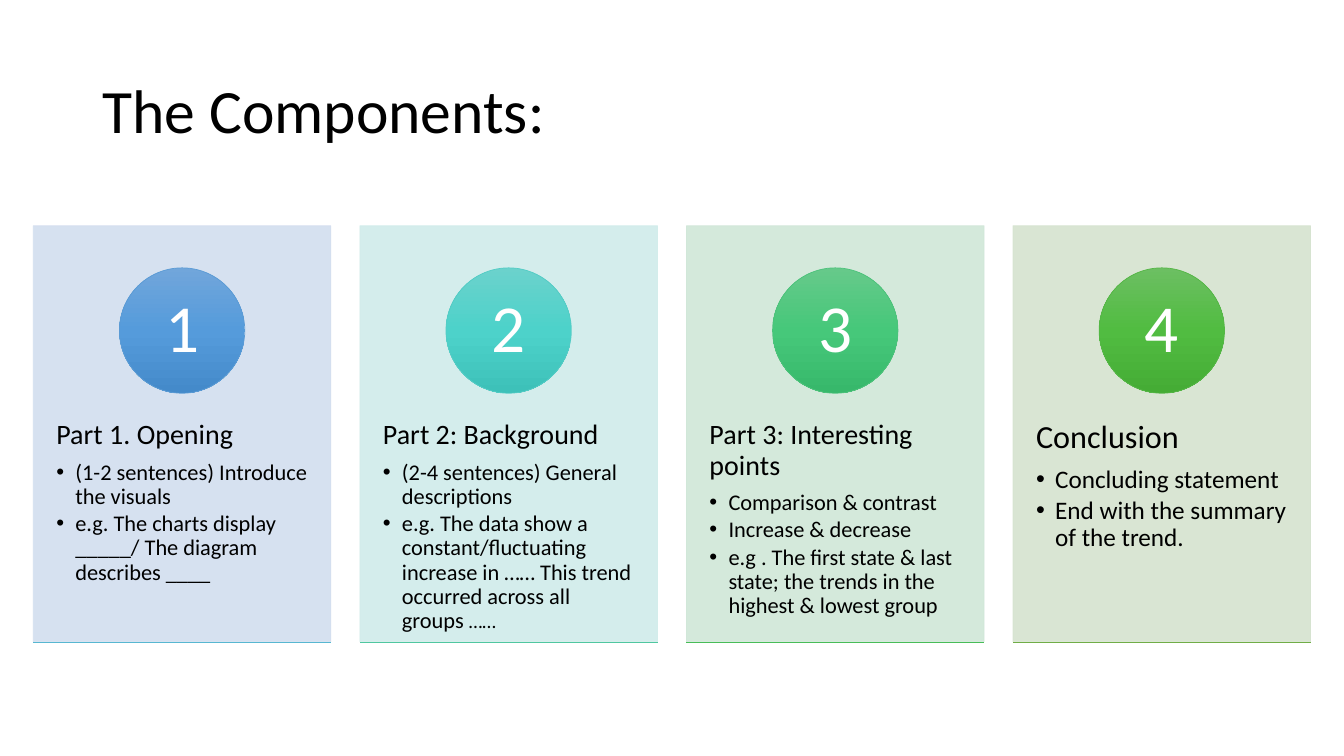
from copy import deepcopy
from dataclasses import dataclass

from lxml.etree import SubElement
from pptx import Presentation
from pptx.dml.color import RGBColor
from pptx.enum.shapes import MSO_CONNECTOR, MSO_SHAPE
from pptx.enum.text import MSO_ANCHOR, MSO_AUTO_SIZE, PP_ALIGN
from pptx.oxml.ns import qn
from pptx.shapes.autoshape import Shape
from pptx.slide import Slide
from pptx.text.text import Font, TextFrame, _Paragraph
from pptx.util import Cm, Length, Pt

BLACK = RGBColor(0x00, 0x00, 0x00)
WHITE = RGBColor(0xFF, 0xFF, 0xFF)
PALE_BLUE = RGBColor(0xD2, 0xDE, 0xEF)
PALE_TEAL = RGBColor(0xD0, 0xEC, 0xEA)
PALE_MINT = RGBColor(0xD0, 0xE7, 0xD8)
PALE_OLIVE = RGBColor(0xD5, 0xE3, 0xCF)
BLUE = RGBColor(0x5B, 0x9B, 0xD5)
TEAL = RGBColor(0x53, 0xCC, 0xC5)
MINT = RGBColor(0x4C, 0xC2, 0x7B)
GREEN = RGBColor(0x55, 0xB6, 0x46)
BLUE_BLEND = (RGBColor(0x71, 0xA6, 0xDB), RGBColor(0x55, 0x9B, 0xDB), RGBColor(0x44, 0x8A, 0xCA))
TEAL_BLEND = (RGBColor(0x6B, 0xD2, 0xCC), RGBColor(0x4D, 0xD2, 0xCA), RGBColor(0x3D, 0xC1, 0xB9))
MINT_BLEND = (RGBColor(0x66, 0xC9, 0x8A), RGBColor(0x46, 0xC8, 0x7A), RGBColor(0x37, 0xB8, 0x6B))
GREEN_BLEND = (RGBColor(0x6C, 0xBF, 0x62), RGBColor(0x51, 0xBC, 0x41), RGBColor(0x45, 0xAC, 0x35))
BASE_SKY = RGBColor(0x57, 0xB7, 0xD1)
BASE_AQUA = RGBColor(0x4F, 0xC7, 0xA0)
BASE_GREEN = RGBColor(0x48, 0xBD, 0x58)
BASE_OLIVE = RGBColor(0x70, 0xAD, 0x47)

FONT = "Calibri"
COMPARISON_LAYOUT = 4
CARD_LEFT, CARD_TOP = Cm(0.84), Cm(5.69)
CARD_WIDTH, CARD_HEIGHT = Cm(7.5), Cm(10.48)
CARD_PITCH = Cm(8.23)
BASE_TOP = Cm(16.18)
BODY_TOP, BODY_HEIGHT = Cm(9.68), Cm(6.27)
BADGE_TOP, BADGE_SIZE = Cm(6.75), Cm(3.16)
BULLET_INDENT = Cm(0.48)
HAIRLINE = Pt(0.5)


@dataclass(frozen=True)
class Component:
    heading: str
    points: tuple[str, ...]
    panel: RGBColor
    blend: tuple[RGBColor, RGBColor, RGBColor]
    rim: RGBColor
    base: RGBColor
    heading_size: int = 20
    point_size: int = 16
    ending: str = ""


COMPONENTS = (
    Component(
        "Part 1. Opening",
        ("(1-2 sentences) Introduce the visuals",
         "e.g. The charts display _____/ The diagram describes ____"),
        PALE_BLUE, BLUE_BLEND, BLUE, BASE_SKY),
    Component(
        "Part 2: Background",
        ("(2-4 sentences) General descriptions",
         "e.g. The data show a constant/fluctuating increase in …… "
         "This trend occurred across all groups "),
        PALE_TEAL, TEAL_BLEND, TEAL, BASE_AQUA, ending="……"),
    Component(
        "Part 3: Interesting points",
        ("Comparison & contrast", "Increase & decrease",
         "e.g . The first state & last state; the trends in the highest & lowest group"),
        PALE_MINT, MINT_BLEND, MINT, BASE_GREEN),
    Component(
        "Conclusion",
        ("Concluding statement", "End with the summary of the trend."),
        PALE_OLIVE, GREEN_BLEND, GREEN, BASE_OLIVE,
        heading_size=23, point_size=18),
)


def format_font(font: Font, size: float, color: RGBColor) -> None:
    font.name = FONT
    font.size = Pt(size)
    font.bold = False
    font.color.rgb = color


def format_paragraph(paragraph: _Paragraph, size: float, color: RGBColor, after: float) -> None:
    paragraph.line_spacing = 0.9
    paragraph.space_before = Pt(0)
    paragraph.space_after = Pt(size * after)
    for run in paragraph.runs:
        format_font(run.font, size, color)


def set_insets(frame: TextFrame, across: Length, down: Length) -> None:
    frame.margin_left = frame.margin_right = across
    frame.margin_top = frame.margin_bottom = down
    frame.word_wrap = True
    frame.auto_size = MSO_AUTO_SIZE.NONE


def set_bullet(paragraph: _Paragraph, shown: bool) -> None:
    properties = paragraph._p.get_or_add_pPr()
    properties.set("marL", str(BULLET_INDENT if shown else 0))
    properties.set("indent", str(-BULLET_INDENT if shown else 0))
    if shown:
        SubElement(properties, qn("a:buFont"), typeface="Arial")
        SubElement(properties, qn("a:buChar"), char="•")
    else:
        SubElement(properties, qn("a:buNone"))


def add_title(slide: Slide) -> None:
    title = slide.shapes.title
    title.left, title.top, title.width, title.height = Cm(2.33), Cm(1.01), Cm(29.21), Cm(3.68)
    title.text_frame.text = "The Components:"
    title.text_frame.vertical_anchor = MSO_ANCHOR.MIDDLE
    title.text_frame.auto_size = MSO_AUTO_SIZE.NONE
    heading = title.text_frame.paragraphs[0]
    heading.alignment = PP_ALIGN.LEFT
    format_paragraph(heading, 44, BLACK, 0)


def add_panel(slide: Slide, left: Length, color: RGBColor) -> None:
    panel = slide.shapes.add_shape(MSO_SHAPE.RECTANGLE, left, CARD_TOP, CARD_WIDTH, CARD_HEIGHT)
    panel.shadow.inherit = False
    panel.fill.solid()
    panel.fill.fore_color.rgb = color
    panel.line.color.rgb = color
    panel.line.width = HAIRLINE
    for tint in panel.element.spPr.iter(qn("a:srgbClr")):
        SubElement(tint, qn("a:alpha"), val="90000")


def fill_gradient(shape: Shape, blend: tuple[RGBColor, RGBColor, RGBColor]) -> None:
    shape.fill.gradient()
    shape.fill.gradient_angle = 270
    stops = shape.element.spPr.find(f".//{qn('a:gsLst')}")
    stops.insert(1, deepcopy(stops[0]))
    for stop, position, color in zip(shape.fill.gradient_stops, (0, 0.5, 1), blend):
        stop.position = position
        stop.color.rgb = color


def add_badge(slide: Slide, left: Length, number: int, component: Component) -> None:
    badge = slide.shapes.add_shape(
        MSO_SHAPE.OVAL, left + (CARD_WIDTH - BADGE_SIZE) // 2, BADGE_TOP, BADGE_SIZE, BADGE_SIZE)
    badge.shadow.inherit = False
    fill_gradient(badge, component.blend)
    badge.line.color.rgb = component.rim
    badge.line.width = HAIRLINE
    frame = badge.text_frame
    frame.text = str(number)
    set_insets(frame, Cm(0.25), Cm(0.03))
    frame.vertical_anchor = MSO_ANCHOR.MIDDLE
    frame.paragraphs[0].alignment = PP_ALIGN.CENTER
    format_paragraph(frame.paragraphs[0], 48, WHITE, 0)


def add_base(slide: Slide, left: Length, color: RGBColor) -> None:
    base = slide.shapes.add_connector(
        MSO_CONNECTOR.STRAIGHT, left, BASE_TOP, left + CARD_WIDTH, BASE_TOP)
    base.line.color.rgb = color
    base.line.width = HAIRLINE
    SubElement(base.element.spPr, qn("a:effectLst"))


def add_body(slide: Slide, left: Length, number: int, component: Component) -> None:
    body = slide.placeholders[number]
    body.left, body.top, body.width, body.height = left, BODY_TOP, CARD_WIDTH, BODY_HEIGHT
    slide.shapes.element.append(body.element)
    frame = body.text_frame
    frame.text = "\n".join((component.heading, *component.points))
    set_insets(frame, Cm(0.58), Cm(0.92))
    frame.vertical_anchor = MSO_ANCHOR.TOP
    heading, *points = frame.paragraphs
    format_paragraph(heading, component.heading_size, BLACK, 0.35)
    set_bullet(heading, False)
    for point in points:
        point.level = 1
        format_paragraph(point, component.point_size, BLACK, 0.15)
        set_bullet(point, True)
    if component.ending:
        ending = points[-1].add_run()
        ending.text = component.ending
        format_font(ending.font, 14, BLACK)


def main() -> None:
    presentation = Presentation()
    presentation.slide_width, presentation.slide_height = Cm(33.87), Cm(19.05)
    slide = presentation.slides.add_slide(presentation.slide_layouts[COMPARISON_LAYOUT])
    add_title(slide)
    for number, component in enumerate(COMPONENTS, start=1):
        left = CARD_LEFT + (number - 1) * CARD_PITCH
        add_panel(slide, left, component.panel)
        add_body(slide, left, number, component)
        add_badge(slide, left, number, component)
        add_base(slide, left, component.base)
    presentation.save("out.pptx")


if __name__ == "__main__":
    main()
